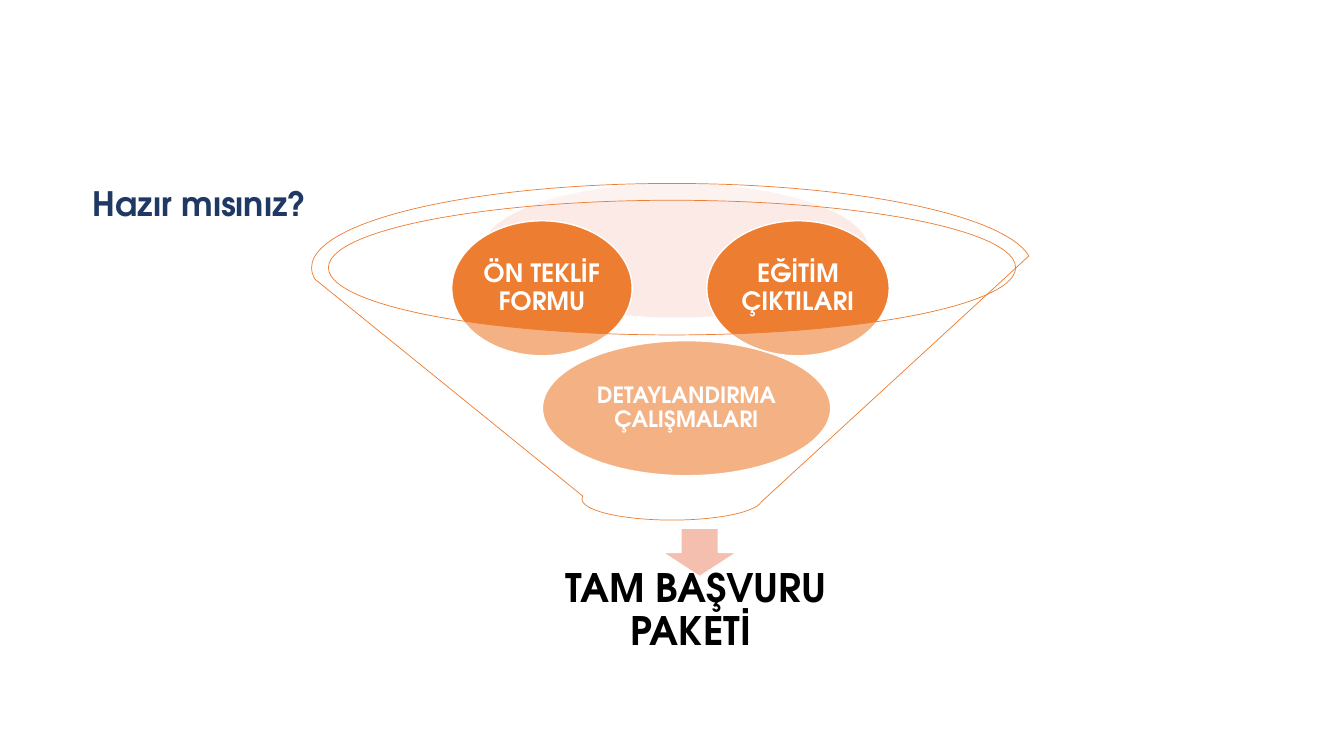
import pptx
import pptx.dml.color
import pptx.enum.shapes
import pptx.enum.text
import pptx.oxml.ns
import pptx.util
from lxml import etree

RGBColor = pptx.dml.color.RGBColor
MSO_SHAPE = pptx.enum.shapes.MSO_SHAPE

PX = 9144  # 100 px to the inch
FONT = "TeX Gyre Adventor"
ORANGE = RGBColor(0xED, 0x7D, 0x31)
PEACH = RGBColor(0xF6, 0xCC, 0xBE)
SALMON = RGBColor(0xF4, 0xBF, 0xAE)
NAVY = RGBColor(0x20, 0x38, 0x64)
WHITE = RGBColor(0xFF, 0xFF, 0xFF)
BLACK = RGBColor(0x00, 0x00, 0x00)


def emu(*lengths):
    return [n * PX for n in lengths]


def add_shape(s, kind, box, fill, line=None, width=1, opacity=None):
    """Add a flat preset shape; opacity is a percentage of the fill."""
    sp = s.shapes.add_shape(kind, *emu(*box))
    sp.shadow.inherit = False
    sp.fill.solid()
    sp.fill.fore_color.rgb = fill
    if opacity is not None:
        color = sp.fill._xPr.find(".//" + pptx.oxml.ns.qn("a:srgbClr"))
        etree.SubElement(color, pptx.oxml.ns.qn("a:alpha"), val=str(opacity * 1000))
    if line is None:
        sp.line.fill.background()
    else:
        sp.line.color.rgb = line
        sp.line.width = pptx.util.Pt(width)
    return sp


def set_text(sp, text, size, color, inset=None, spacing=None,
             anchor=pptx.enum.text.MSO_ANCHOR.MIDDLE):
    tf = sp.text_frame
    tf.text = text
    tf.word_wrap = True
    tf.vertical_anchor = anchor
    if inset is not None:
        tf.margin_left = tf.margin_right = inset * PX
        tf.margin_top = tf.margin_bottom = inset * PX
    p = tf.paragraphs[0]
    p.alignment = pptx.enum.text.PP_ALIGN.CENTER
    p.line_spacing = spacing
    font = p.runs[0].font
    font.name = FONT
    font.size = pptx.util.Pt(size)
    font.bold = True
    font.color.rgb = color


def add_ball(s, box, text, size, inset):
    sp = add_shape(s, MSO_SHAPE.OVAL, box, ORANGE, WHITE)
    set_text(sp, text, size, WHITE, inset, 0.9)


def add_funnel(s):
    add_shape(s, MSO_SHAPE.OVAL, (478, 182, 384, 133), PEACH, opacity=40)
    add_shape(s, MSO_SHAPE.DOWN_ARROW, (657, 524, 74, 48), SALMON, WHITE)
    result = s.shapes.add_textbox(*emu(512, 562, 357, 89))
    set_text(result, "TAM BAŞVURU PAKETİ ", 28, BLACK, 22, 0.9)
    add_ball(s, (538, 338, 286, 134), "DETAYLANDIRMA ÇALIŞMALARI", 16, 2)
    add_ball(s, (448, 219, 179, 134), "ÖN TEKLİF FORMU", 18, 3)
    add_ball(s, (701, 219, 181, 134), "EĞİTİM ÇIKTILARI", 18, 3)
    add_shape(s, MSO_SHAPE.FUNNEL, (309, 182, 715, 334), WHITE, ORANGE, 0.5, 40)


def main():
    prs = pptx.Presentation()
    prs.slide_width, prs.slide_height = emu(1333, 750)
    s = prs.slides.add_slide(prs.slide_layouts[6])
    add_funnel(s)
    question = s.shapes.add_textbox(*emu(79, 177, 238, 50))
    set_text(question, "Hazır mısınız?", 24, NAVY,
             anchor=pptx.enum.text.MSO_ANCHOR.TOP)
    prs.save("out.pptx")


if __name__ == "__main__":
    main()
